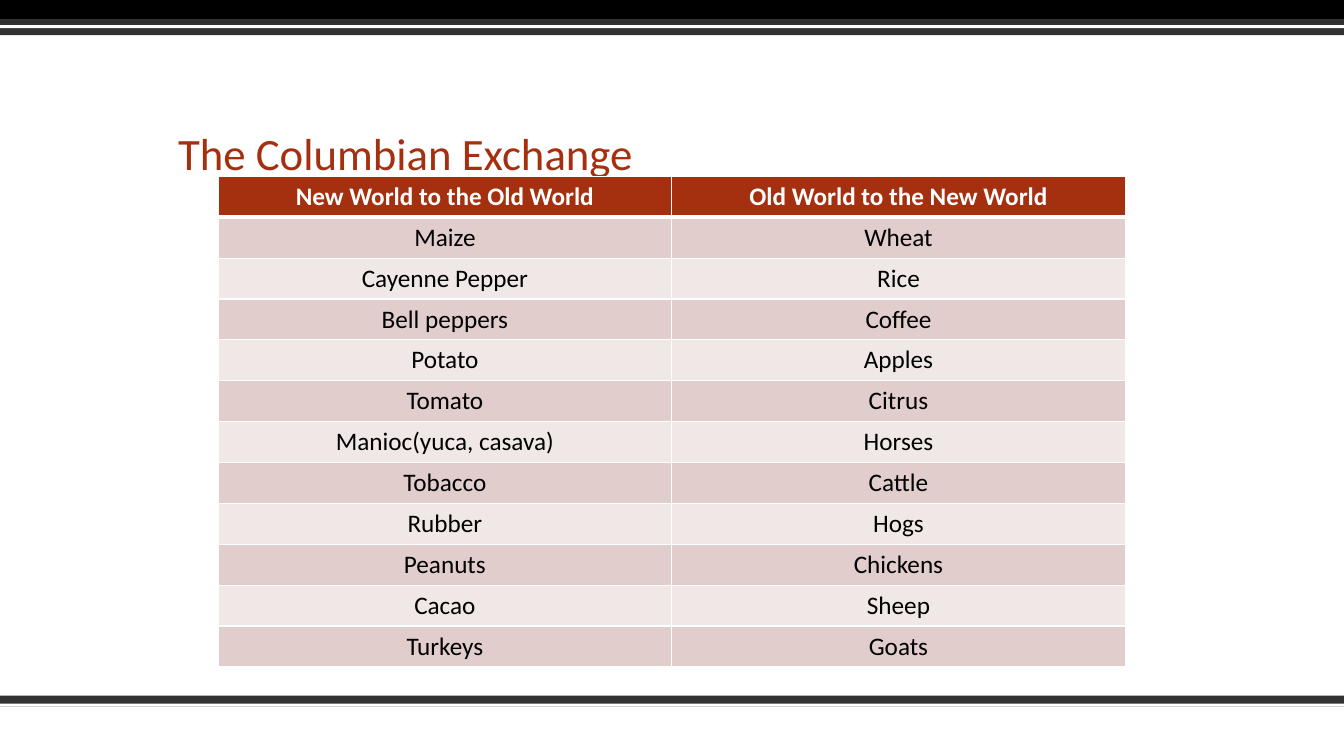
"""Build the Columbian Exchange slide with its two-column table."""
from lxml.etree import SubElement
from pptx import Presentation
from pptx.dml.color import RGBColor
from pptx.enum.shapes import MSO_SHAPE
from pptx.enum.text import MSO_ANCHOR, PP_ALIGN
from pptx.oxml.ns import qn
from pptx.util import Pt

BLACK = RGBColor(0x00, 0x00, 0x00)
WHITE = RGBColor(0xFF, 0xFF, 0xFF)
CHARCOAL = RGBColor(0x32, 0x32, 0x32)
RUST = RGBColor(0xA5, 0x30, 0x0F)
ROSE = RGBColor(0xE1, 0xCD, 0xCC)
PALE_ROSE = RGBColor(0xF0, 0xE8, 0xE7)

BARS = [
    (496.8, 7.92, CHARCOAL),
    (502.56, 2.16, WHITE),
    (0, 13.68, BLACK),
    (13.68, 11.52, CHARCOAL),
    (18, 2.16, WHITE),
]
EXCHANGES = [
    ("New World to the Old World", "Old World to the New World"),
    ("Maize", "Wheat"),
    ("Cayenne Pepper", "Rice"),
    ("Bell peppers", "Coffee"),
    ("Potato", "Apples"),
    ("Tomato", "Citrus"),
    ("Manioc(yuca, casava)", "Horses"),
    ("Tobacco", "Cattle"),
    ("Rubber", "Hogs"),
    ("Peanuts", "Chickens"),
    ("Cacao", "Sheep"),
    ("Turkeys", "Goats"),
]
COLUMN_WIDTH = 324
ROW_HEIGHT = 29.2


def add_text(paragraph, text, size, color, bold=False):
    run = paragraph.add_run()
    run.text = text
    run.font.name = "Calibri"
    run.font.size = Pt(size)
    run.font.bold = bold
    run.font.color.rgb = color


def add_border(cell, side, width):
    properties = cell._tc.get_or_add_tcPr()
    line = SubElement(properties, qn(f"a:ln{side}"), w=str(Pt(width)))
    fill = SubElement(line, qn("a:solidFill"))
    SubElement(fill, qn("a:srgbClr"), val=str(WHITE))


presentation = Presentation()
presentation.slide_width = Pt(960)
presentation.slide_height = Pt(540)
slide = presentation.slides.add_slide(presentation.slide_layouts[5])

title = slide.shapes.title
title.left, title.top, title.width, title.height = Pt(120), Pt(48), Pt(720), Pt(84)
title.text_frame.vertical_anchor = MSO_ANCHOR.BOTTOM
title_paragraph = title.text_frame.paragraphs[0]
title_paragraph.alignment = PP_ALIGN.LEFT
title_paragraph.line_spacing = 0.9
add_text(title_paragraph, "The Columbian Exchange", 32, RUST)

for top, height, color in BARS:
    bar = slide.shapes.add_shape(MSO_SHAPE.RECTANGLE, 0, Pt(top), Pt(960), Pt(height))
    bar.shadow.inherit = False
    bar.fill.solid()
    bar.fill.fore_color.rgb = color
    bar.line.fill.background()

table = slide.shapes.add_table(
    len(EXCHANGES), 2, Pt(155.8), Pt(126),
    Pt(2 * COLUMN_WIDTH), Pt(len(EXCHANGES) * ROW_HEIGHT),
).table
for column in table.columns:
    column.width = Pt(COLUMN_WIDTH)

for row_index, goods in enumerate(EXCHANGES):
    table.rows[row_index].height = Pt(ROW_HEIGHT)
    is_header = row_index == 0
    band = RUST if is_header else ROSE if row_index % 2 else PALE_ROSE
    for column_index, name in enumerate(goods):
        cell = table.cell(row_index, column_index)
        add_border(cell, "L", 1)
        add_border(cell, "R", 1)
        add_border(cell, "T", 3 if row_index == 1 else 1)
        add_border(cell, "B", 3 if is_header else 1)
        cell.fill.solid()
        cell.fill.fore_color.rgb = band
        paragraph = cell.text_frame.paragraphs[0]
        paragraph.alignment = PP_ALIGN.CENTER
        add_text(paragraph, name, 18, WHITE if is_header else BLACK, is_header)

presentation.save("out.pptx")
